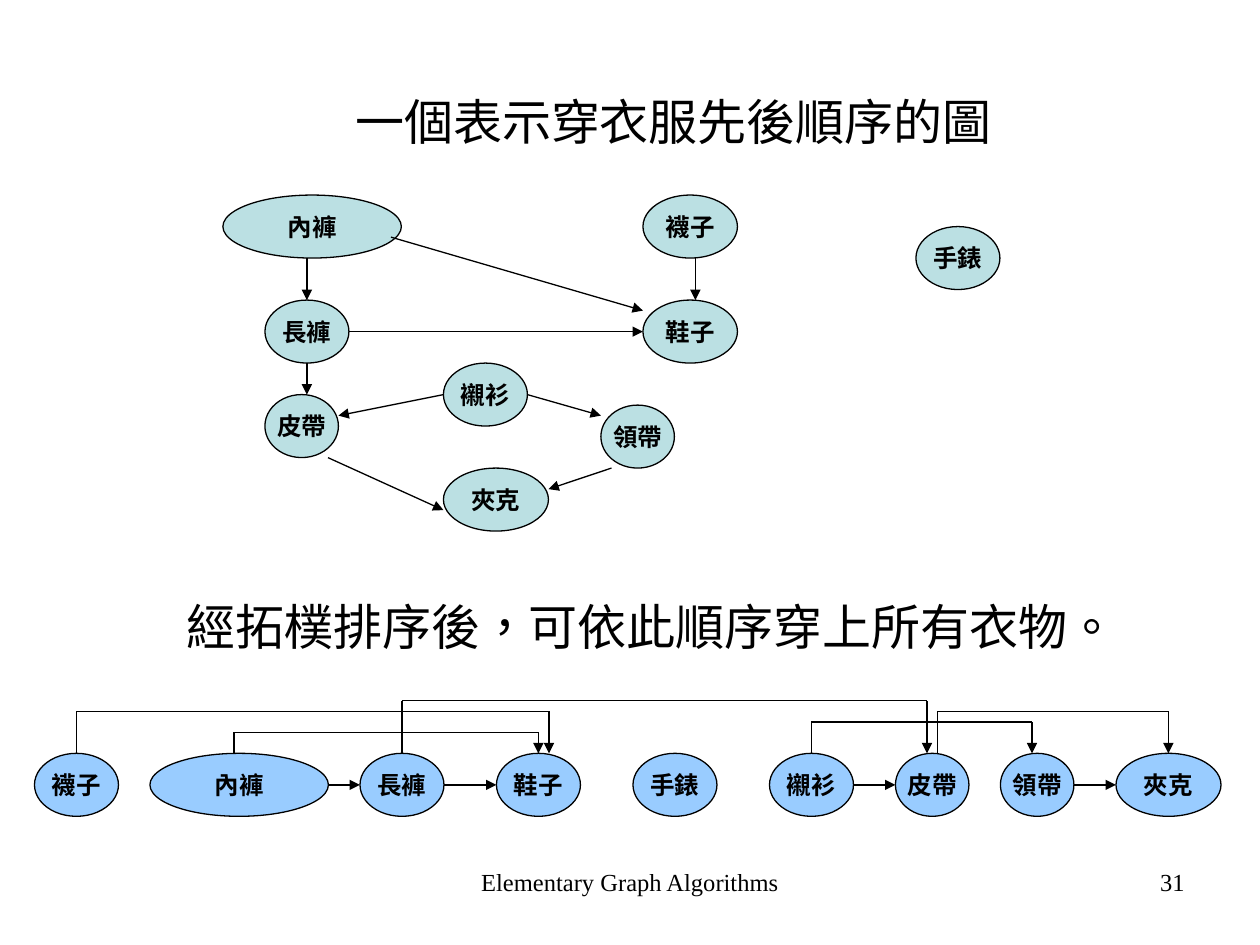
from lxml.etree import SubElement
from pptx import Presentation
from pptx.dml.color import RGBColor
from pptx.enum.lang import MSO_LANGUAGE_ID as Language
from pptx.enum.shapes import MSO_CONNECTOR as Connector, MSO_SHAPE as Shape
from pptx.enum.text import MSO_ANCHOR as Anchor, MSO_AUTO_SIZE as AutoSize, PP_ALIGN as Align
from pptx.oxml.ns import qn
from pptx.util import Pt


def color(hex_value):
    return RGBColor.from_string(hex_value)


def write(shape, text, size, font_name, align, bold=False):
    paragraph = shape.text_frame.paragraphs[0]
    paragraph.alignment = align
    run = paragraph.add_run()
    run.text = text
    run.font.size = Pt(size)
    run.font.name = font_name
    run.font.bold = bold
    run.font.color.rgb = color("000000")
    if not text.isascii():
        run.font.language_id = Language.TRADITIONAL_CHINESE


presentation = Presentation()
presentation.slide_width = Pt(720)
presentation.slide_height = Pt(540)
slide = presentation.slides.add_slide(presentation.slide_layouts[6])

texts = [
    ("Elementary Graph Algorithms", 246, 492, 228, 37.5, 14, "Times New Roman", Align.CENTER),
    ("31", 516, 492, 168, 37.5, 14, "Times New Roman", Align.RIGHT),
    ("一個表示穿衣服先後順序的圖", 196, 49, 391, 41, 28, "Arial", Align.LEFT),
    ("經拓樸排序後，可依此順序穿上所有衣物。", 99.5, 337.5, 561.5, 41, 28, "Arial", Align.LEFT),
]
for text, left, top, width, height, size, font_name, align in texts:
    box = slide.shapes.add_textbox(Pt(left), Pt(top), Pt(width), Pt(height))
    box.text_frame.word_wrap = True
    if size == 28:
        box.text_frame.auto_size = AutoSize.SHAPE_TO_FIT_TEXT
    write(box, text, size, font_name, align)

node_height = 36

order_left, order_top = 19.7, 430.5
order_nodes = [
    ("襪子", 0, 0, 48), ("內褲", 66, 0, 102), ("長褲", 186, 0, 48),
    ("鞋子", 264, 0, 48), ("手錶", 342, 0, 48), ("襯衫", 420, 0, 48),
    ("皮帶", 492, 0, 42), ("領帶", 552, 0, 42), ("夾克", 618, 0, 60),
]
order_lines = []
for source, target in [(1, 2), (2, 3), (5, 6), (7, 8)]:
    start = order_nodes[source][1] + order_nodes[source][3]
    order_lines.append((start, 18, order_nodes[target][1], 18, True))
for start, end, rise in [(114, 288, 12), (24, 294, 24), (210, 510, 30), (516, 648, 24), (444, 570, 18)]:
    order_lines += [
        (start, 0, start, -rise, False),
        (start, -rise, end, -rise, False),
        (end, -rise, end, 0, True),
    ]

graph_left, graph_top = 127.4, 111.5
graph_nodes = [
    ("內褲", 0, 0, 102), ("襪子", 240, 0, 54), ("長褲", 24, 60, 48),
    ("鞋子", 240, 60, 54), ("皮帶", 24, 114, 42), ("襯衫", 126, 96, 48),
    ("領帶", 216, 120, 42), ("夾克", 126, 156, 60), ("手錶", 396, 18, 48),
]
graph_lines = [
    (48, 36, 48, 60, True), (48, 96, 48, 114, True), (72, 78, 240, 78, True),
    (126, 114, 66, 126, True), (174, 114, 216, 126, True), (222, 156, 186, 168, True),
    (96, 24, 240, 66, True), (270, 36, 270, 60, True), (60, 150, 126, 180, True),
]

diagrams = [
    (order_left, order_top, "99CCFF", order_nodes, order_lines),
    (graph_left, graph_top, "BBE0E3", graph_nodes, graph_lines),
]
for left, top, fill, nodes, lines in diagrams:
    group = slide.shapes.add_group_shape()
    for text, x, y, width in nodes:
        node = group.shapes.add_shape(Shape.OVAL, Pt(left + x), Pt(top + y), Pt(width), Pt(node_height))
        node.shadow.inherit = False
        node.fill.solid()
        node.fill.fore_color.rgb = color(fill)
        node.line.color.rgb = color("000000")
        node.line.width = Pt(0.75)
        node.text_frame.word_wrap = False
        node.text_frame.vertical_anchor = Anchor.MIDDLE
        write(node, text, 14, "Times New Roman", Align.CENTER, bold=True)
    for x1, y1, x2, y2, has_arrow in lines:
        line = group.shapes.add_connector(
            Connector.STRAIGHT, Pt(left + x1), Pt(top + y1), Pt(left + x2), Pt(top + y2))
        line.line.color.rgb = color("000000")
        line.line.width = Pt(0.75)
        if has_arrow:
            SubElement(line.line._get_or_add_ln(), qn("a:tailEnd"), type="triangle")
        SubElement(line._element.spPr, qn("a:effectLst"))

presentation.save("out.pptx")
